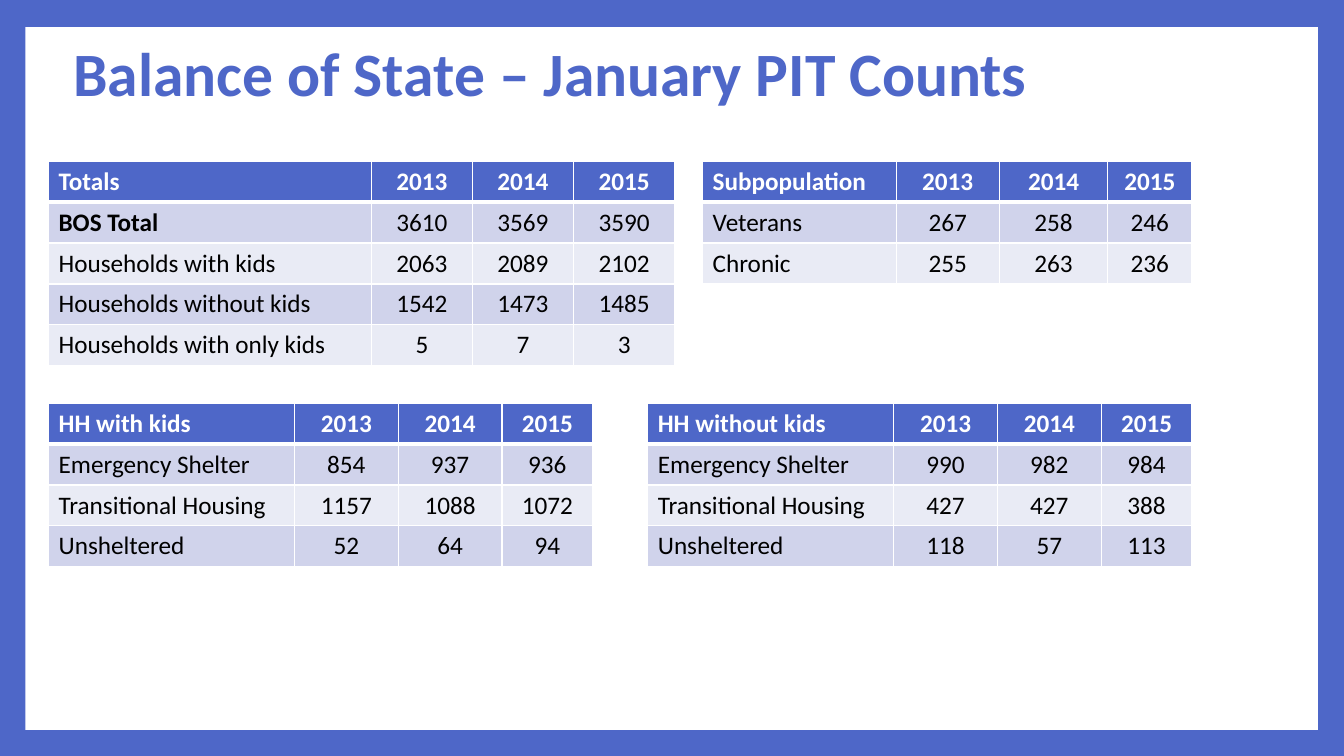
from lxml.etree import SubElement
from pptx import Presentation
from pptx.dml.color import RGBColor
from pptx.enum.shapes import MSO_SHAPE
from pptx.enum.text import MSO_ANCHOR, PP_ALIGN
from pptx.oxml.ns import qn
from pptx.util import Pt

BLUE, WHITE, BLACK = "4E67C8", "FFFFFF", "000000"
BANDS = ["D0D3EB", "E9EBF5"]
YEARS = ["2013", "2014", "2015"]
ROW_HEIGHT = 29.2
LEFT, RIGHT = 34.7, 851.4
UPPER, LOWER = 115.2, 288
HOUSEHOLD_WIDTHS = [175.7, 74.1, 74.1, 64.8]
SUBPOPULATION_WIDTHS = [138.3, 73.6, 77.6, 60]


def color(value):
    return RGBColor.from_string(value)


def paint(target, value):
    target.fill.solid()
    target.fill.fore_color.rgb = color(value)


def style_text(paragraph, size, value, bold, alignment):
    paragraph.alignment = alignment
    for run in paragraph.runs:
        run.font.name = "Calibri"
        run.font.size = Pt(size)
        run.font.bold = bold
        run.font.color.rgb = color(value)


def set_borders(cell, bottom):
    properties = cell.fill._xPr
    for index, (side, weight) in enumerate(
            [("lnL", 1), ("lnR", 1), ("lnT", 1), ("lnB", bottom)]):
        line = SubElement(properties, qn(f"a:{side}"), w=str(Pt(weight)))
        fill = SubElement(line, qn("a:solidFill"))
        SubElement(fill, qn("a:srgbClr"), val=WHITE)
        properties.insert(index, line)


def add_frame(slide, left, top, width, height):
    layout = slide.slide_layout
    paint(layout.background, BLUE)
    for placeholder in list(layout.placeholders)[1:]:
        layout.placeholders.element.remove(placeholder.element)
    panel = slide.shapes.add_shape(
        MSO_SHAPE.RECTANGLE, Pt(left), Pt(top), Pt(width), Pt(height))
    panel.shadow.inherit = False
    paint(panel, WHITE)
    panel.line.fill.background()
    layout.placeholders[0].element.addprevious(panel.element)


def add_title(slide, text, left, top, width, height):
    title = slide.shapes.title
    title.left, title.top = Pt(left), Pt(top)
    title.width, title.height = Pt(width), Pt(height)
    title.text_frame.text = text
    title.text_frame.vertical_anchor = MSO_ANCHOR.MIDDLE
    paragraph = title.text_frame.paragraphs[0]
    paragraph.line_spacing = 0.9
    style_text(paragraph, 44, BLUE, True, PP_ALIGN.LEFT)


def add_counts(slide, left, top, widths, heading, counts, bold_label=None):
    rows = [[heading, *YEARS], *counts]
    table = slide.shapes.add_table(
        len(rows), len(widths), Pt(left), Pt(top),
        Pt(sum(widths)), Pt(ROW_HEIGHT * len(rows))).table
    for column, width in zip(table.columns, widths):
        column.width = Pt(width)
    for row_index, values in enumerate(rows):
        header = row_index == 0
        table.rows[row_index].height = Pt(ROW_HEIGHT)
        for column_index, value in enumerate(values):
            cell = table.cell(row_index, column_index)
            paint(cell, BLUE if header else BANDS[(row_index - 1) % 2])
            if header:
                set_borders(cell, 3)
            cell.text_frame.text = str(value)
            style_text(
                cell.text_frame.paragraphs[0], 18,
                WHITE if header else BLACK,
                header or value == bold_label,
                PP_ALIGN.CENTER if column_index else PP_ALIGN.LEFT)


def build_counts_slide(presentation):
    slide = presentation.slides.add_slide(presentation.slide_layouts[5])
    add_frame(slide, 18.2, 19.3, 923.2, 502)
    add_title(slide, "Balance of State – January PIT Counts", 45.2, 16.6, 777.6, 76.3)
    add_counts(slide, LEFT, UPPER, [230.6, 72.2, 72.2, 72.4], "Totals", [
        ["BOS Total", 3610, 3569, 3590],
        ["Households with kids", 2063, 2089, 2102],
        ["Households without kids", 1542, 1473, 1485],
        ["Households with only kids", 5, 7, 3],
    ], "BOS Total")
    add_counts(slide, LEFT, LOWER, HOUSEHOLD_WIDTHS, "HH with kids", [
        ["Emergency Shelter", 854, 937, 936],
        ["Transitional Housing", 1157, 1088, 1072],
        ["Unsheltered", 52, 64, 94],
    ])
    add_counts(slide, RIGHT - sum(HOUSEHOLD_WIDTHS), LOWER, HOUSEHOLD_WIDTHS, "HH without kids", [
        ["Emergency Shelter", 990, 982, 984],
        ["Transitional Housing", 427, 427, 388],
        ["Unsheltered", 118, 57, 113],
    ])
    add_counts(slide, RIGHT - sum(SUBPOPULATION_WIDTHS), UPPER, SUBPOPULATION_WIDTHS, "Subpopulation", [
        ["Veterans", 267, 258, 246],
        ["Chronic", 255, 263, 236],
    ])


def main():
    presentation = Presentation()
    presentation.slide_width, presentation.slide_height = Pt(960), Pt(540)
    build_counts_slide(presentation)
    presentation.save("out.pptx")


if __name__ == "__main__":
    main()
